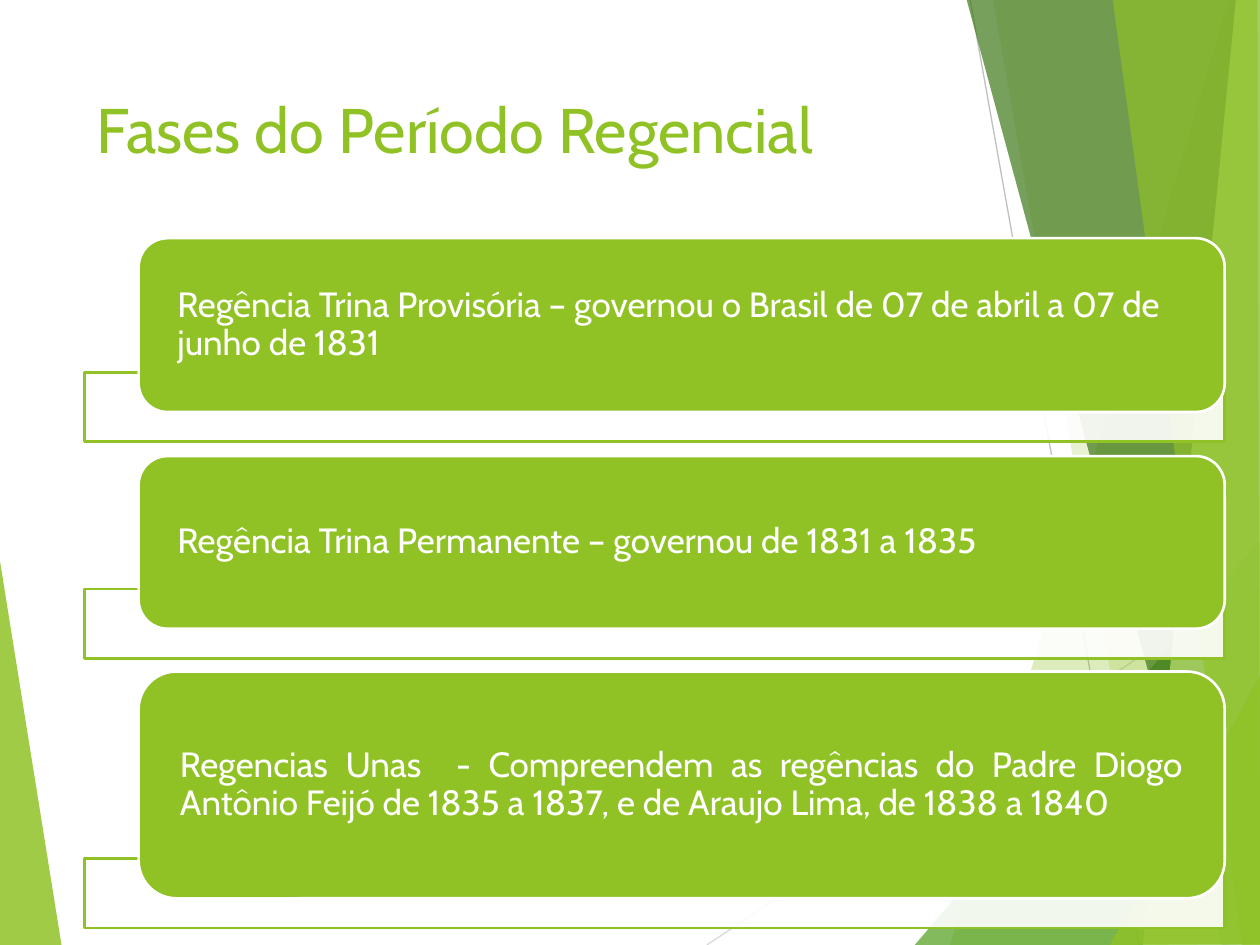
import dataclasses
import typing

import pptx
import pptx.dml.color
import pptx.enum.shapes
import pptx.enum.text
import pptx.oxml
import pptx.oxml.ns
import pptx.util

RGBColor = pptx.dml.color.RGBColor
LIME = RGBColor(0x90, 0xC2, 0x26)
GREEN = RGBColor(0x54, 0xA0, 0x21)
FOREST = RGBColor(0x3F, 0x78, 0x19)
PALE_LIME = RGBColor(0xC0, 0xE4, 0x74)
WHITE = RGBColor(0xFF, 0xFF, 0xFF)
LIGHT_GREY = RGBColor(0xD9, 0xD9, 0xD9)
GREY = RGBColor(0xBF, 0xBF, 0xBF)

COLUMNS, ROWS = 100, 75
WIDTH, HEIGHT = pptx.util.Inches(10), pptx.util.Inches(7.5)
FONT = "Cabin"
LEFT, RIGHT = 6.7, 97.2
CARD_LEFT = 11
STRIP_ROWS = 5.5
STRIP_OVERHANG = 2.35
CORNER_SHARE = 0.049

Point = tuple[float, float]
SHAPE = pptx.enum.shapes.MSO_SHAPE
ALIGN = pptx.enum.text.PP_ALIGN
ANCHOR = pptx.enum.text.MSO_ANCHOR


@dataclasses.dataclass(frozen=True)
class Facet:
    points: tuple[Point, ...]
    color: RGBColor
    opacity: int


@dataclasses.dataclass(frozen=True)
class Ray:
    start: Point
    end: Point
    color: RGBColor


@dataclasses.dataclass(frozen=True)
class Phase:
    top: float
    rows: float
    text: str
    align: typing.Any = ALIGN.LEFT


LEFT_FACET = Facet(((-0.1, 43.9), (4.9, 75.1), (-0.1, 75)), LIME, 85)
RAYS = (
    Ray((56.1, 75), (100.1, 45.7), LIGHT_GREY),
    Ray((77, 0), (90.4, 75), GREY),
)
RIGHT_FACETS = (
    Facet(((97.5, 0), (75.4, 75), (100.2, 75.1), (100.1, 0.1)), LIME, 30),
    Facet(((78.8, -0.1), (91.9, 75), (100.1, 75), (100.1, -0.1)), LIME, 20),
    Facet(((72.6, 75), (100, 42.9), (100.1, 75)), GREEN, 72),
    Facet(((76.7, -0.1), (97, 75), (100.1, 74.9), (100.1, -0.1)), FOREST, 70),
    Facet(((98.1, -0.1), (90.7, 75), (100.1, 75), (100, -0.1)), PALE_LIME, 70),
    Facet(((88.3, -0.1), (98.6, 75), (100, 75), (99.8, -0.1)), LIME, 65),
    Facet(((88.1, 75), (100.1, 53.5), (100.1, 74.9)), LIME, 80),
)
PHASES = (
    Phase(18.9, 13.8, "Regência Trina Provisória – governou o Brasil de 07 de abril a 07 de junho de 1831"),
    Phase(36.2, 13.7, "Regência Trina Permanente – governou de 1831 a 1835"),
    Phase(53.3, 18, "Regencias Unas  - Compreendem as regências do Padre Diogo Antônio Feijó de 1835 a 1837, e de Araujo Lima, de 1838 a 1840", ALIGN.JUSTIFY),
)


def col(count: float) -> pptx.util.Emu:
    return pptx.util.Emu(round(WIDTH * count / COLUMNS))


def row(count: float) -> pptx.util.Emu:
    return pptx.util.Emu(round(HEIGHT * count / ROWS))


def box(left: float, top: float, columns: float, rows: float) -> tuple:
    return col(left), row(top), col(columns), row(rows)


def apply(target: typing.Any, values: dict[str, typing.Any]) -> None:
    for attribute, value in values.items():
        setattr(target, attribute, value)


def paint(shape: typing.Any, color: RGBColor, opacity: int = 100) -> None:
    shape.shadow.inherit = False
    shape.fill.solid()
    shape.fill.fore_color.rgb = color
    if opacity < 100:
        tint = shape.fill._xPr.find(".//" + pptx.oxml.ns.qn("a:srgbClr"))
        alpha = pptx.oxml.parse_xml(f'<a:alpha {pptx.oxml.ns.nsdecls("a")} val="{opacity * 1000}"/>')
        tint.append(alpha)


def outline(shape: typing.Any, color: RGBColor, points: float) -> None:
    shape.line.color.rgb = color
    shape.line.width = pptx.util.Pt(points)


def draw_facet(shapes: typing.Any, facet: Facet) -> None:
    first, *rest = [(col(x), row(y)) for x, y in facet.points]
    builder = shapes.build_freeform(*first)
    builder.add_line_segments(rest, close=True)
    shape = builder.convert_to_shape()
    paint(shape, facet.color, facet.opacity)
    shape.line.fill.background()


def draw_ray(shapes: typing.Any, ray: Ray) -> None:
    (x1, y1), (x2, y2) = ray.start, ray.end
    line = shapes.add_connector(
        pptx.enum.shapes.MSO_CONNECTOR.STRAIGHT, col(x1), row(y1), col(x2), row(y2)
    )
    outline(line, ray.color, 0.75)
    line._element.spPr.append(pptx.oxml.parse_xml(f'<a:effectLst {pptx.oxml.ns.nsdecls("a")}/>'))


def draw_text(shapes: typing.Any, area: tuple, text: str, size: float, color: RGBColor,
              frame_format: dict[str, typing.Any], paragraph_format: dict[str, typing.Any]) -> None:
    frame = shapes.add_textbox(*area).text_frame
    apply(frame, {"word_wrap": True} | frame_format)
    paragraph = frame.paragraphs[0]
    apply(paragraph, paragraph_format)
    run = paragraph.add_run()
    run.text = text
    apply(run.font, {"name": FONT, "size": pptx.util.Pt(size)})
    run.font.color.rgb = color


def draw_phase(shapes: typing.Any, phase: Phase) -> None:
    bottom = phase.top + phase.rows
    strip_top = bottom + STRIP_OVERHANG - STRIP_ROWS
    strip = shapes.add_shape(SHAPE.RECTANGLE, *box(LEFT, strip_top, RIGHT - LEFT, STRIP_ROWS))
    paint(strip, WHITE, 90)
    outline(strip, LIME, 1.5)

    columns = RIGHT - CARD_LEFT
    card = shapes.add_shape(
        SHAPE.ROUNDED_RECTANGLE, *box(CARD_LEFT, phase.top, columns, phase.rows)
    )
    paint(card, LIME)
    outline(card, WHITE, 1.5)

    inset = phase.rows * CORNER_SHARE
    area = box(CARD_LEFT + inset, phase.top + inset, columns - 2 * inset, phase.rows - 2 * inset)
    margins = {
        "margin_left": col(2.4), "margin_right": col(2.4),
        "margin_top": 0, "margin_bottom": 0, "vertical_anchor": ANCHOR.MIDDLE,
    }
    draw_text(shapes, area, phase.text, 20, WHITE, margins,
              {"alignment": phase.align, "line_spacing": 0.9})


def main() -> None:
    deck = pptx.Presentation()
    apply(deck, {"slide_width": WIDTH, "slide_height": HEIGHT})
    slide = deck.slides.add_slide(deck.slide_layouts[6])
    slide.background.fill.solid()
    slide.background.fill.fore_color.rgb = WHITE
    shapes = slide.shapes
    draw_facet(shapes, LEFT_FACET)
    for ray in RAYS:
        draw_ray(shapes, ray)
    for facet in RIGHT_FACETS:
        draw_facet(shapes, facet)
    draw_text(shapes, box(LEFT, 6.7, 69.4, 14.4), "Fases do Período Regencial", 36, LIME,
              {"vertical_anchor": ANCHOR.TOP}, {"alignment": ALIGN.LEFT})
    for phase in PHASES:
        draw_phase(shapes, phase)
    deck.save("out.pptx")


if __name__ == "__main__":
    main()
